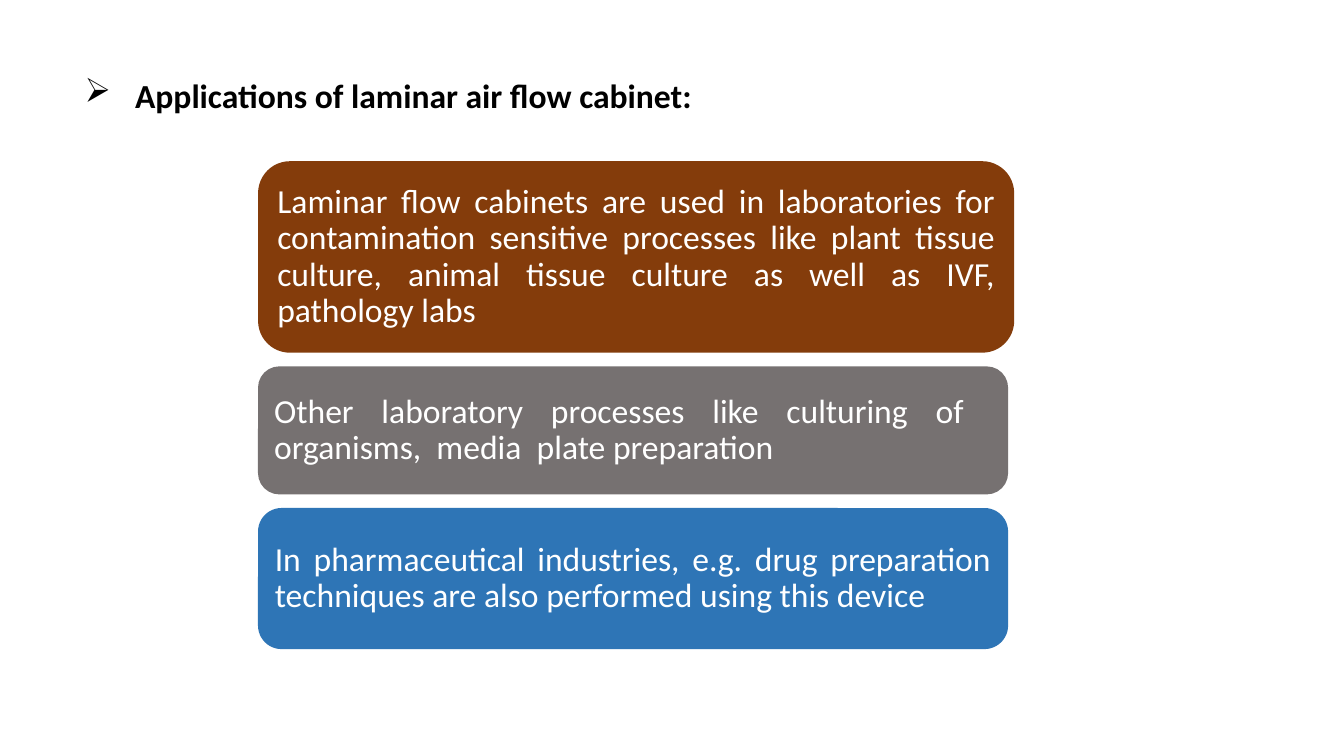
from dataclasses import dataclass

from lxml.etree import SubElement
from pptx import Presentation
from pptx.dml.color import RGBColor
from pptx.enum.shapes import MSO_SHAPE as Shape
from pptx.enum.text import MSO_ANCHOR as Anchor, MSO_AUTO_SIZE as AutoSize, PP_ALIGN as Align
from pptx.oxml.ns import qn
from pptx.util import Inches, Pt


@dataclass(frozen=True)
class Theme:
    font: str = "Calibri"
    size: float = 24
    ink: str = "000000"
    light: str = "FFFFFF"
    brown: str = "843C0B"
    gray: str = "767171"
    blue: str = "2E75B6"


@dataclass(frozen=True)
class Box:
    left: int
    top: int
    width: int
    height: int


THEME = Theme()
TITLE = "Applications of laminar air flow cabinet:"
APPLICATIONS = [
    ("Laminar flow cabinets are used in laboratories for contamination sensitive processes "
     "like plant tissue culture, animal tissue culture as well as IVF, pathology labs",
     THEME.brown, 100, 39.26),
    ("Other laboratory processes like culturing of  organisms,  media  plate preparation",
     THEME.gray, 99.2, 26.24),
    ("In pharmaceutical industries, e.g. drug preparation techniques are also performed "
     "using this device",
     THEME.blue, 99.2, 28.92),
]


def share(box, left, top, width, height):
    return Box(
        round(box.left + box.width * left / 100),
        round(box.top + box.height * top / 100),
        round(box.width * width / 100),
        round(box.height * height / 100),
    )


def place(shape, box):
    shape.left, shape.top = box.left, box.top
    shape.width, shape.height = box.width, box.height


def style(paragraph, color, align, bold=False):
    paragraph.alignment = align
    paragraph.font.name = THEME.font
    paragraph.font.size = Pt(THEME.size)
    paragraph.font.bold = bold
    paragraph.font.color.rgb = RGBColor.from_string(color)


def add_bullet(paragraph, character):
    properties = paragraph._p.get_or_add_pPr()
    properties.set("marL", str(Inches(0.51)))
    properties.set("indent", str(Inches(-0.5)))
    SubElement(properties, qn("a:buChar")).set("char", character)


def add_title(slide, box, text):
    title = slide.shapes.title
    place(title, box)
    frame = title.text_frame
    frame.text = text
    frame.word_wrap = True
    frame.auto_size = AutoSize.NONE
    frame.vertical_anchor = Anchor.TOP
    style(frame.paragraphs[0], THEME.ink, Align.LEFT, bold=True)
    add_bullet(frame.paragraphs[0], "➢")


def add_card(slide, box, text, color):
    card = slide.shapes.add_shape(Shape.ROUNDED_RECTANGLE, box.left, box.top, box.width, box.height)
    card.shadow.inherit = False
    card.fill.solid()
    card.fill.fore_color.rgb = RGBColor.from_string(color)
    card.line.fill.background()
    frame = card.text_frame
    frame.text = text
    frame.word_wrap = True
    frame.vertical_anchor = Anchor.MIDDLE
    paragraph = frame.paragraphs[0]
    paragraph.line_spacing = 0.9
    style(paragraph, THEME.light, Align.JUSTIFY)


def add_applications(slide, box, applications):
    gap = (100 - sum(height for *_, height in applications)) / (len(applications) - 1)
    top = 0
    for text, color, width, height in applications:
        add_card(slide, share(box, 0, top, width, height), text, color)
        top += height + gap


def main():
    presentation = Presentation()
    presentation.slide_width = Inches(13.33)
    presentation.slide_height = Inches(7.5)
    page = Box(0, 0, presentation.slide_width, presentation.slide_height)
    slide = presentation.slides.add_slide(presentation.slide_layouts.get_by_name("Title Only"))
    add_title(slide, share(page, 5.48, 9.2, 53.79, 6.8), TITLE)
    add_applications(slide, share(page, 19.2, 21.33, 56.26, 64.53), APPLICATIONS)
    presentation.save("out.pptx")


if __name__ == "__main__":
    main()
